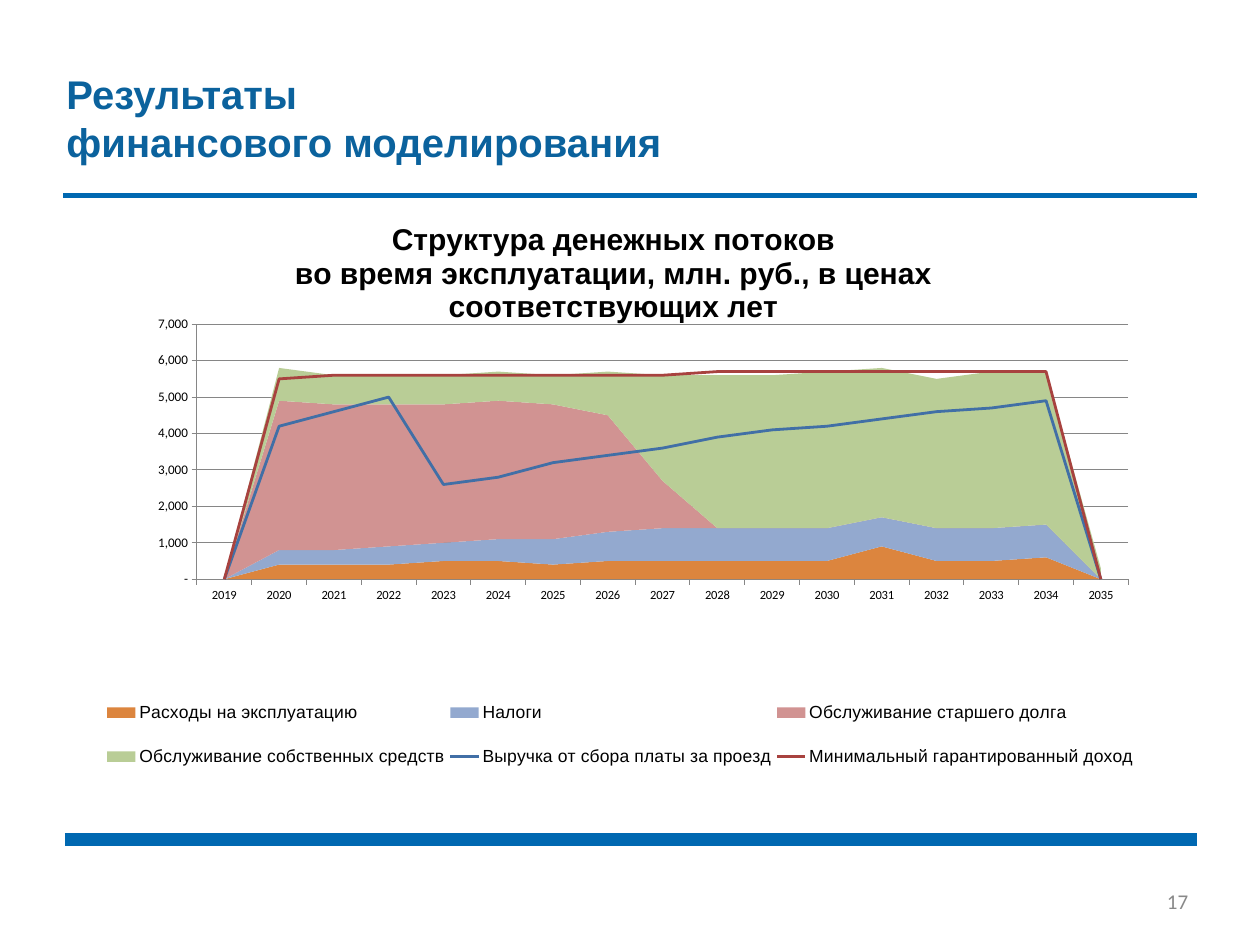
"""Build the financial modelling results slide with a cash flow chart."""
from lxml import etree
from pptx import Presentation
from pptx.chart.data import CategoryChartData
from pptx.dml.color import RGBColor
from pptx.enum.chart import XL_CHART_TYPE as ChartType, XL_LEGEND_POSITION as LegendPosition
from pptx.enum.chart import XL_MARKER_STYLE as MarkerStyle, XL_TICK_MARK as TickMark
from pptx.enum.text import MSO_ANCHOR as Anchor, PP_ALIGN as Align
from pptx.oxml import parse_xml
from pptx.oxml.ns import nsdecls, qn
from pptx.util import Inches, Pt


def color(value):
    return RGBColor.from_string(value)


def manual_layout(x, y, width=None, height=None, inner=False):
    layout = etree.Element(qn("c:layout"))
    manual = etree.SubElement(layout, qn("c:manualLayout"))
    values = [("xMode", "edge"), ("yMode", "edge"), ("x", x), ("y", y), ("w", width), ("h", height)]
    if inner:
        values.insert(0, ("layoutTarget", "inner"))
    for name, value in values:
        if value is not None:
            etree.SubElement(manual, qn(f"c:{name}")).set("val", str(value))
    return layout


presentation = Presentation()
presentation.slide_width = Inches(14)
presentation.slide_height = Inches(10.5)
slide = presentation.slides.add_slide(presentation.slide_layouts[6])

for left, top, weight in [(0.72, 9.33, 10.5), (0.7, 2.17, 4)]:
    rule = slide.shapes.add_connector(1, Inches(left), Inches(top), Inches(13.3), Inches(top))
    rule.line.color.rgb = color("0068B1")
    rule.line.width = Pt(weight)
    etree.SubElement(rule._element.spPr, qn("a:effectLst"))

texts = [
    ((9.65, 9.73, 3.65, 0.56), ["17"], "Calibri", 16.8, "898989", False, Align.RIGHT, Anchor.MIDDLE),
    ((0.64, 0.72, 9.43, 1.18), ["Результаты", "финансового моделирования"],
     "Arial", 32, "0B629D", True, Align.LEFT, Anchor.TOP),
]
for box, lines, font_name, size, text_color, bold, alignment, anchor in texts:
    frame = slide.shapes.add_textbox(*map(Inches, box)).text_frame
    frame.word_wrap = True
    frame.vertical_anchor = anchor
    for index, line in enumerate(lines):
        paragraph = frame.add_paragraph() if index else frame.paragraphs[0]
        paragraph.alignment = alignment
        run = paragraph.add_run()
        run.text = line
        run.font.name = font_name
        run.font.size = Pt(size)
        run.font.bold = bold
        run.font.color.rgb = color(text_color)

areas = [
    ("Расходы на эксплуатацию", "DC853E",
     [0, 400, 400, 400, 500, 500, 400, 500, 500, 500, 500, 500, 900, 500, 500, 600, 0]),
    ("Налоги", "93A9CF",
     [0, 400, 400, 500, 500, 600, 700, 800, 900, 900, 900, 900, 800, 900, 900, 900, 0]),
    ("Обслуживание старшего долга", "D19392",
     [0, 4100, 4000, 3900, 3800, 3800, 3700, 3200, 1300, 0, 0, 0, 0, 0, 0, 0, 0]),
    ("Обслуживание собственных средств", "B9CD96",
     [0, 900, 800, 800, 800, 800, 800, 1200, 2900, 4200, 4200, 4300, 4100, 4100, 4300, 4200, 300]),
]
lines = [
    ("Выручка от сбора платы за проезд", "416FA6",
     [0, 4200, 4600, 5000, 2600, 2800, 3200, 3400, 3600, 3900, 4100, 4200, 4400, 4600, 4700, 4900, 0]),
    ("Минимальный гарантированный доход", "A8423F",
     [None, 5500] + [5600] * 7 + [5700] * 7 + [None]),
]
chart_data = CategoryChartData()
chart_data.categories = [str(year) for year in range(2019, 2036)]
for name, series_color, values in areas + lines:
    chart_data.add_series(name, values)
chart = slide.shapes.add_chart(
    ChartType.AREA_STACKED, Inches(1.13), Inches(2.29), Inches(11.76), Inches(6.91), chart_data
).chart
chart.font.name = "Calibri"
chart.font.size = Pt(10)
chart.font.color.rgb = color("000000")

plot_area = chart._chartSpace.chart.plotArea
area_chart = plot_area.find(qn("c:areaChart"))
line_chart = parse_xml(
    f'<c:lineChart {nsdecls("c")}><c:grouping val="standard"/><c:varyColors val="0"/>'
    '<c:marker val="1"/></c:lineChart>'
)
area_chart.addnext(line_chart)
for series_element in area_chart.findall(qn("c:ser"))[len(areas):]:
    for flag in series_element.findall(qn("c:invertIfNegative")):
        series_element.remove(flag)
    line_chart.find(qn("c:marker")).addprevious(series_element)
for axis_id in area_chart.findall(qn("c:axId")):
    etree.SubElement(line_chart, qn("c:axId")).set("val", axis_id.get("val"))
for blanks in chart._chartSpace.iter(qn("c:dispBlanksAs")):
    blanks.set("val", "zero")

area_plot, line_plot = chart.plots
area_plot.vary_by_categories = False
for series, (name, series_color, values) in zip(area_plot.series, areas):
    series.format.fill.solid()
    series.format.fill.fore_color.rgb = color(series_color)
    series.format.line.fill.background()
for series, (name, series_color, values) in zip(line_plot.series, lines):
    series.format.line.color.rgb = color(series_color)
    series.format.line.width = Pt(2.25)
    series.marker.style = MarkerStyle.NONE
    series.smooth = False

category_axis, value_axis = chart.category_axis, chart.value_axis
for axis, size in [(category_axis, 10), (value_axis, 10.5)]:
    axis.major_tick_mark = TickMark.OUTSIDE
    axis.minor_tick_mark = TickMark.NONE
    axis.tick_labels.font.size = Pt(size)
    axis.format.line.color.rgb = color("868686")
category_axis.has_major_gridlines = False
value_axis.has_major_gridlines = True
value_axis.major_gridlines.format.line.color.rgb = color("868686")
value_axis.minimum_scale = 0
value_axis.maximum_scale = 7000
value_axis.major_unit = 1000
value_axis.tick_labels.number_format = r"#,##0;\(#,##0\);\-"
value_axis.tick_labels.number_format_is_linked = False
for crossing in plot_area.iter(qn("c:crossBetween")):
    crossing.set("val", "between")

chart.has_title = True
title_frame = chart.chart_title.text_frame
title_lines = ["Структура денежных потоков", "во время эксплуатации, млн. руб., в ценах соответствующих лет"]
for index, line in enumerate(title_lines):
    paragraph = title_frame.add_paragraph() if index else title_frame.paragraphs[0]
    paragraph.alignment = Align.CENTER
    run = paragraph.add_run()
    run.text = line
    run.font.name = "Arial"
    run.font.size = Pt(24)
    run.font.bold = True
    run.font.color.rgb = color("000000")

chart.has_legend = True
chart.legend.position = LegendPosition.BOTTOM
chart.legend.include_in_layout = False
chart.legend.font.name = "Arial"
chart.legend.font.size = Pt(14)
chart.legend.font.color.rgb = color("000000")

for parent in (plot_area, chart.legend._element, chart.chart_title._element):
    for layout in parent.findall(qn("c:layout")):
        parent.remove(layout)
plot_area.insert(0, manual_layout(0.09, 0.19, 0.88, 0.41, inner=True))
chart.legend._element.find(qn("c:legendPos")).addnext(manual_layout(0, 0.76, 0.98, 0.18))
chart.chart_title._element.find(qn("c:tx")).addnext(manual_layout(0.18, 0.02))

presentation.save("out.pptx")
